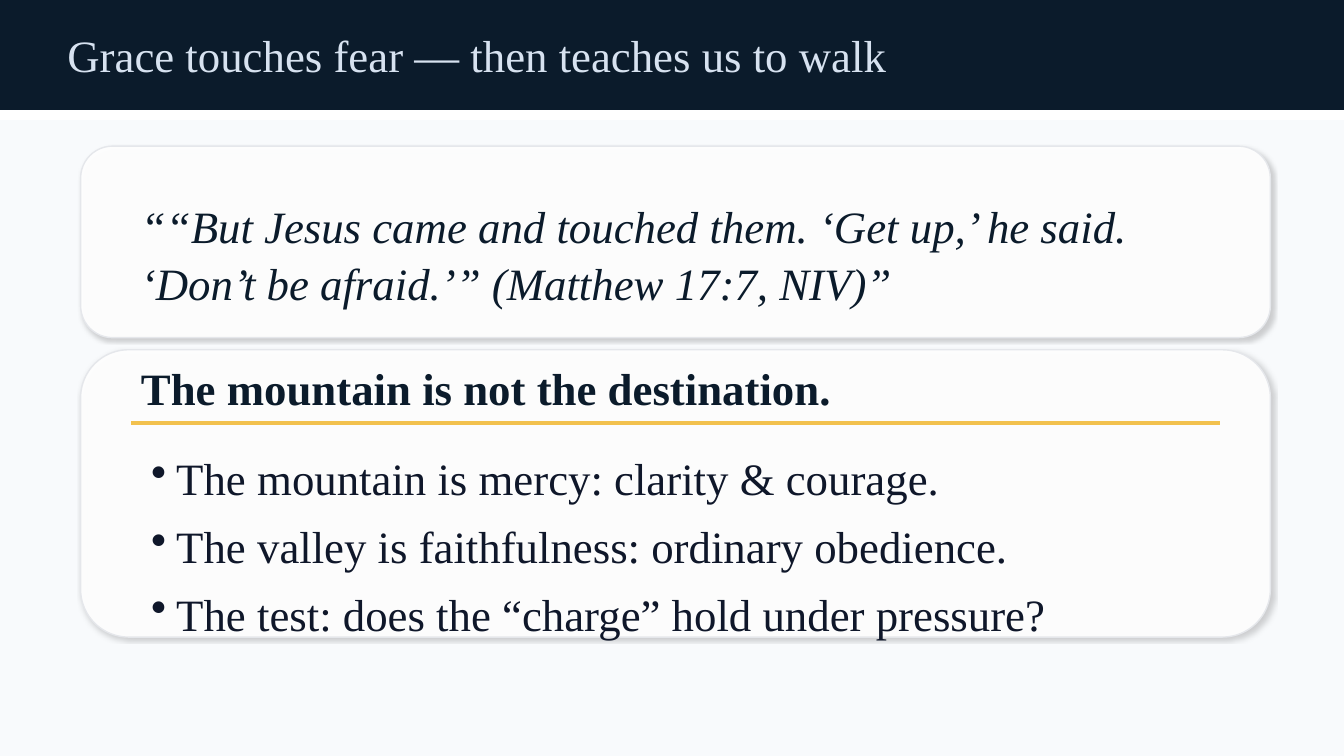
from dataclasses import dataclass

from lxml.etree import SubElement
from pptx import Presentation
from pptx.dml.color import RGBColor
from pptx.enum.shapes import MSO_CONNECTOR as Connector, MSO_SHAPE as Shape
from pptx.enum.text import MSO_ANCHOR as Anchor, PP_ALIGN as Align
from pptx.oxml.ns import qn
from pptx.util import Pt

EMU_PER_PX = 9144
PAGE_WIDTH, PAGE_HEIGHT = 1333, 750


@dataclass(frozen=True)
class Theme:
    """Colours, font and sizes shared by the whole slide."""
    navy: str = "0B1B2B"
    title: str = "D7E2F0"
    canvas: str = "F8FAFC"
    card: str = "FFFFFF"
    card_edge: str = "E5E7EB"
    gold: str = "F2C14E"
    body: str = "0F172A"
    shadow: str = "000000"
    font: str = "Times New Roman"
    size: int = 32
    leading: float = 1.05
    card_opacity: int = 94
    shadow_opacity: int = 18


THEME = Theme()


def px(length):
    """Turn whole px into EMU."""
    return length * EMU_PER_PX


def set_alpha(color, percent):
    """Give a colour element an opacity."""
    SubElement(color, qn("a:alpha"), val=str(percent * 1000))


def add_panel(page, kind, box, fill, edge):
    """Add a filled shape with a thin outline and no shadow."""
    panel = page.shapes.add_shape(kind, *map(px, box))
    panel.shadow.inherit = False
    panel.fill.solid()
    panel.fill.fore_color.rgb = RGBColor.from_string(fill)
    panel.line.color.rgb = RGBColor.from_string(edge)
    panel.line.width = Pt(1)
    return panel


def add_card(page, box):
    """Add a translucent rounded card with a soft shadow."""
    card = add_panel(page, Shape.ROUNDED_RECTANGLE, box, THEME.card, THEME.card_edge)
    properties = card._element.spPr
    set_alpha(properties.find(qn("a:solidFill"))[0], THEME.card_opacity)
    shadow = SubElement(
        properties.find(qn("a:effectLst")), qn("a:outerShdw"),
        blurRad=str(Pt(3)), dist=str(Pt(2)), dir=str(45 * 60000),
        algn="bl", rotWithShape="0")
    color = SubElement(shadow, qn("a:srgbClr"), val=THEME.shadow)
    set_alpha(color, THEME.shadow_opacity)


def add_bullet(para):
    """Give a paragraph a hanging bullet."""
    properties = para._p.get_or_add_pPr()
    properties.set("marL", str(px(25)))
    properties.set("indent", str(-px(25)))
    SubElement(properties, qn("a:buChar"), char="•")


def add_text(page, box, lines, color, anchor=Anchor.TOP, bold=False, italic=False,
             bullets=False, leading=None):
    """Add a wrapped text box with one paragraph per line."""
    frame = page.shapes.add_textbox(*map(px, box)).text_frame
    frame.word_wrap = True
    frame.vertical_anchor = anchor
    for index, line in enumerate(lines):
        para = frame.add_paragraph() if index else frame.paragraphs[0]
        para.alignment = Align.LEFT
        if leading:
            para.line_spacing = leading
        if bullets:
            para.space_after = Pt(8)
            add_bullet(para)
        span = para.add_run()
        span.text = line
        span.font.name = THEME.font
        span.font.size = Pt(THEME.size)
        span.font.bold = bold
        span.font.italic = italic
        span.font.color.rgb = RGBColor.from_string(color)


def add_rule(page, left, top, width):
    """Add a horizontal gold rule."""
    rule = page.shapes.add_connector(
        Connector.STRAIGHT, px(left), px(top), px(left + width), px(top))
    rule.line.color.rgb = RGBColor.from_string(THEME.gold)
    rule.line.width = Pt(3)
    SubElement(rule._element.spPr, qn("a:effectLst"))


def add_header(page, box, title):
    """Add the dark band with the slide title."""
    left, top, width, height = box
    add_panel(page, Shape.RECTANGLE, box, THEME.navy, THEME.navy)
    add_text(page, (left + 57, top + 43, width - 113, 22), [title], THEME.title,
             anchor=Anchor.MIDDLE)


def add_quote_card(page, box, quote):
    """Add the card that holds the scripture quote."""
    left, top, width, height = box
    add_card(page, box)
    add_text(page, (left + 50, top + 45, width - 100, height - 40), [quote],
             THEME.navy, italic=True, leading=THEME.leading)


def add_points_card(page, box, heading, points):
    """Add the card with a heading, a rule and bullet points."""
    left, top, width, height = box
    add_card(page, box)
    add_text(page, (left + 50, top + 13, width - 100, 50), [heading], THEME.navy,
             anchor=Anchor.MIDDLE, bold=True)
    add_rule(page, left + 50, top + 73, width - 100)
    add_text(page, (left + 60, top + 93, width - 120, height - 145), points,
             THEME.body, bullets=True, leading=THEME.leading)


def main():
    """Build the slide and save the deck."""
    deck = Presentation()
    deck.slide_width, deck.slide_height = px(PAGE_WIDTH), px(PAGE_HEIGHT)
    page = deck.slides.add_slide(deck.slide_layouts[6])
    add_header(page, (0, 0, PAGE_WIDTH, 108),
               "Grace touches fear — then teaches us to walk")
    add_panel(page, Shape.RECTANGLE, (0, 120, PAGE_WIDTH, PAGE_HEIGHT - 120),
              THEME.canvas, THEME.canvas)
    add_quote_card(page, (80, 145, 1180, 190),
                   "““But Jesus came and touched them. ‘Get up,’ he said. "
                   "‘Don’t be afraid.’” (Matthew 17:7, NIV)”")
    add_points_card(page, (80, 347, 1180, 285),
                    "The mountain is not the destination.",
                    ["The mountain is mercy: clarity & courage.",
                     "The valley is faithfulness: ordinary obedience.",
                     "The test: does the “charge” hold under pressure?"])
    deck.save("out.pptx")


if __name__ == "__main__":
    main()
